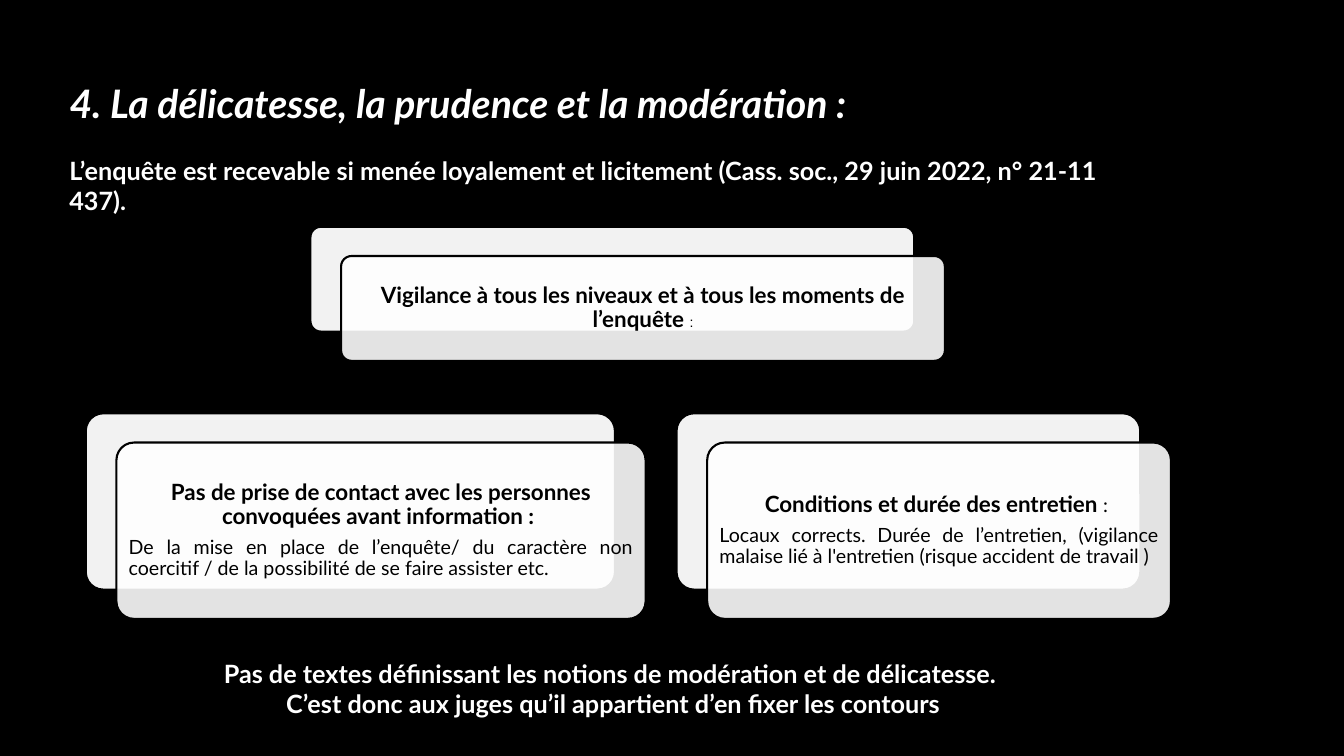
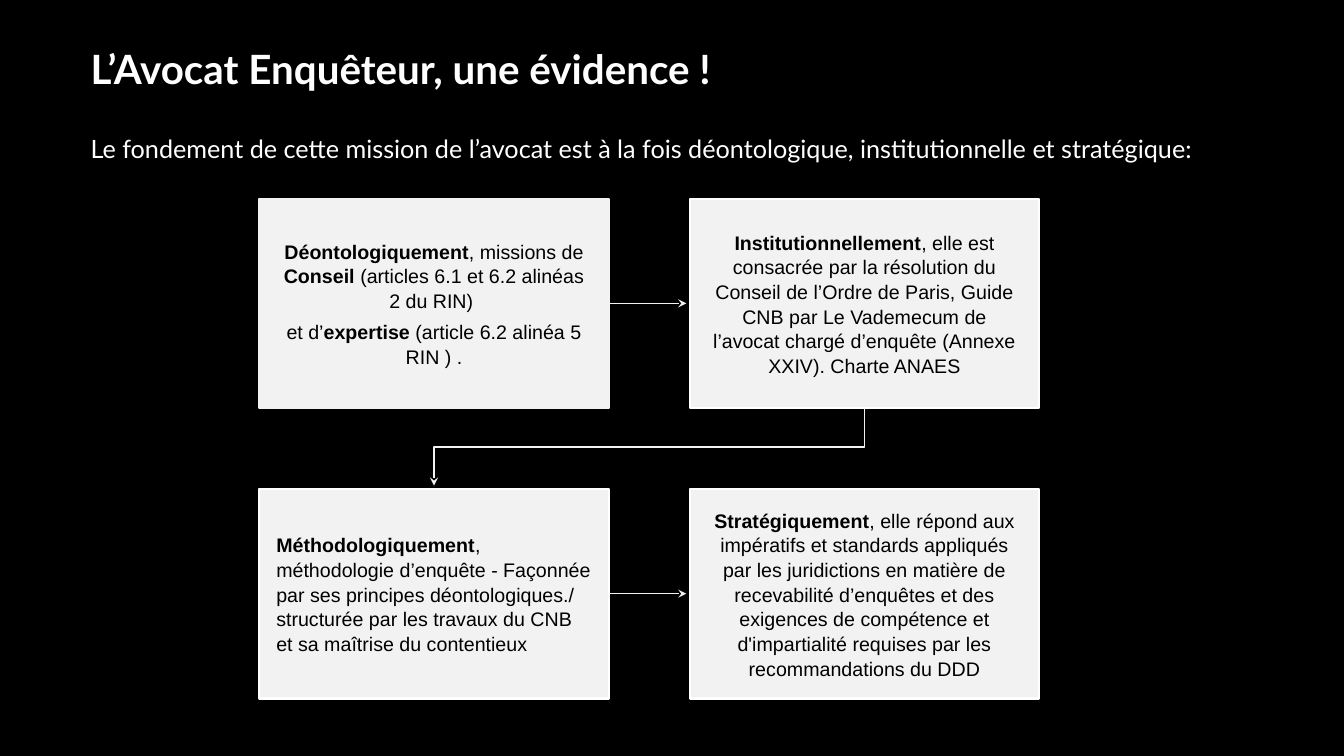
"""Build two slides on the lawyer's inquiry: its moderation rules and its foundations."""
import dataclasses
import typing

import lxml.etree
import pptx
import pptx.dml.color
import pptx.enum.shapes
import pptx.enum.text
import pptx.oxml.ns
import pptx.util

COLORS = {"black": "000000", "white": "FFFFFF", "light": "F2F2F2"}
SHAPES = pptx.enum.shapes.MSO_SHAPE
LINES = pptx.enum.shapes.MSO_CONNECTOR
ALIGN = pptx.enum.text.PP_ALIGN
ANCHOR = pptx.enum.text.MSO_ANCHOR
SIZE = (pptx.util.Inches(13.33), pptx.util.Inches(7.5))

TITLE = {"name": "Lato", "size": pptx.util.Pt(28), "bold": True, "italic": False}
LEAD = TITLE | {"size": pptx.util.Pt(18)}
HEAD = TITLE | {"size": pptx.util.Pt(16)}
BODY = TITLE | {"size": pptx.util.Pt(14), "bold": False}
CARD = BODY | {"name": "Arial"}
STRONG = CARD | {"bold": True}


class Run(typing.NamedTuple):
    text: str
    fmt: dict


@dataclasses.dataclass
class Para:
    runs: list[Run]
    align: ALIGN = ALIGN.CENTER
    spacing: float = 1.0
    before: float = 0


class Box(typing.NamedTuple):
    """A rectangle in hundredths of the slide's width and height."""
    x: float
    y: float
    w: float
    h: float

    def emu(self) -> list[int]:
        return [*across(self.x, self.y), *across(self.w, self.h)]


@dataclasses.dataclass
class Panel:
    box: Box
    paras: list[Para]


def across(x: float, y: float) -> tuple[int, int]:
    """Turn hundredths of the slide into lengths."""
    return round(SIZE[0] * x / 100), round(SIZE[1] * y / 100)


def rgb(name: str) -> pptx.dml.color.RGBColor:
    """Look up a colour."""
    return pptx.dml.color.RGBColor.from_string(COLORS[name])


def assign(target: object, values: dict) -> None:
    """Set each attribute of the target."""
    for key, value in values.items():
        setattr(target, key, value)


def write(tf, paras: list[Para], color: str, anchor: ANCHOR, inset: tuple[float, float]) -> None:
    """Fill a text frame with formatted paragraphs."""
    dx, dy = map(pptx.util.Inches, inset)
    assign(tf, {"word_wrap": True, "auto_size": pptx.enum.text.MSO_AUTO_SIZE.NONE,
                "vertical_anchor": anchor, "margin_left": dx, "margin_right": dx,
                "margin_top": dy, "margin_bottom": dy})
    for i, para in enumerate(paras):
        p = tf.add_paragraph() if i else tf.paragraphs[0]
        assign(p, {"alignment": para.align, "line_spacing": para.spacing,
                   "space_before": pptx.util.Pt(para.before)})
        for run in para.runs:
            r = p.add_run()
            r.text = run.text
            assign(r.font, run.fmt)
            r.font.color.rgb = rgb(color)


def add_text(s, box: Box, paras: list[Para]) -> None:
    """Add white text on the background."""
    write(s.shapes.add_textbox(*box.emu()).text_frame, paras, "white", ANCHOR.TOP, (0.1, 0.05))


def add_slide(prs, box: Box, title: str, **fmt):
    """Add a slide with its title placed and formatted."""
    s = prs.slides.add_slide(prs.slide_layouts[5])
    sp = s.shapes.title
    assign(sp, dict(zip(("left", "top", "width", "height"), box.emu())))
    write(sp.text_frame, [Para([Run(title, TITLE | fmt)], ALIGN.LEFT)], "white",
          ANCHOR.MIDDLE, (0.1, 0.05))
    return s


def add_block(s, kind: SHAPES, box: Box, fill: str, line: str):
    """Add a filled and outlined shape."""
    sp = s.shapes.add_shape(kind, *box.emu())
    sp.shadow.inherit = False
    sp.fill.solid()
    sp.fill.fore_color.rgb = rgb(fill)
    sp.line.color.rgb = rgb(line)
    sp.line.width = pptx.util.Pt(1.5)
    if kind == SHAPES.ROUNDED_RECTANGLE:
        sp.adjustments[0] = 0.1
    return sp


def add_layered(s, panel: Panel) -> None:
    """Add a rounded card with a translucent sheet shifted over it."""
    box = panel.box
    add_block(s, SHAPES.ROUNDED_RECTANGLE, box, "light", "black")
    front = box._replace(x=box.x + 2.28, y=box.y + 3.87)
    sp = add_block(s, SHAPES.ROUNDED_RECTANGLE, front, "white", "black")
    clr = sp._element.spPr.find(pptx.oxml.ns.qn("a:solidFill"))[0]
    lxml.etree.SubElement(clr, pptx.oxml.ns.qn("a:alpha"), val="89000")
    write(sp.text_frame, panel.paras, "black", ANCHOR.MIDDLE, (0.07, 0.07))


def add_arrow(s, kind: LINES, begin: tuple[int, int], end: tuple[int, int], turned: bool = False) -> None:
    """Add an arrow; a turned one leaves and arrives vertically."""
    if turned:
        (x1, y1), (x2, y2) = begin, end
        mx, my = (x1 + x2) // 2, (y1 + y2) // 2
        dx, dy = abs(y2 - y1) // 2, abs(x2 - x1) // 2
        begin, end = (mx - dx, my - dy), (mx + dx, my + dy)
    cx = s.shapes.add_connector(kind, *begin, *end)
    cx.line.color.rgb = rgb("light")
    cx.line.width = pptx.util.Pt(1)
    qn, sp_pr = pptx.oxml.ns.qn, cx._element.spPr
    if turned:
        sp_pr.find(qn("a:xfrm")).set("rot", "5400000")
    lxml.etree.SubElement(sp_pr.find(qn("a:ln")), qn("a:tailEnd"), type="stealth")
    lxml.etree.SubElement(sp_pr, qn("a:effectLst"))


def moderation(prs) -> None:
    """Draw the slide on delicacy, prudence and moderation."""
    s = add_slide(prs, Box(4.42, 8.93, 82.3, 9.33),
                  "4. La délicatesse, la prudence et la modération :", italic=True)
    add_text(s, Box(4.42, 19.87, 82.3, 10), [Para([Run(
        "L’enquête est recevable si menée loyalement et licitement "
        "(Cass. soc., 29 juin 2022, n° 21‑11 437).", LEAD)], ALIGN.LEFT)])
    panels = [
        Panel(Box(23.1, 30, 44.93, 13.87), [
            Para([Run("Vigilance à tous les niveaux et à tous les moments de l’enquête ", HEAD),
                  Run(":", CARD | {"size": pptx.util.Pt(10)})], spacing=0.9)]),
        Panel(Box(6.38, 54.67, 39.38, 23.33), [
            Para([Run("Pas de prise de contact avec les personnes convoquées avant information : ",
                      HEAD)], spacing=0.9),
            Para([Run("De la mise en place de l’enquête/ du caractère non coercitif / "
                      "de la possibilité de se faire assister etc. ", BODY)],
                 ALIGN.JUSTIFY, 0.9, 5.6)]),
        Panel(Box(50.34, 54.67, 34.51, 23.33), [
            Para([Run("Conditions et durée des entretien ", HEAD), Run(": ", BODY)], spacing=0.9),
            Para([Run("Locaux corrects. Durée de l’entretien, (vigilance malaise lié à l'entretien "
                      "(risque accident de travail )", BODY)], ALIGN.JUSTIFY, 0.9, 5.6)]),
    ]
    for panel in panels:
        add_layered(s, panel)
    add_text(s, Box(2.18, 86.4, 86.87, 13.47), [Para([Run(text, LEAD)]) for text in (
        "Pas de textes définissant les notions de modération et de délicatesse. ",
        "C’est donc aux juges qu’il appartient d’en fixer les contours")])


def foundations(prs) -> None:
    """Draw the slide on the four foundations of the mission."""
    s = add_slide(prs, Box(6, 4.4, 84.62, 9.33), "L’Avocat Enquêteur, une évidence !",
                  size=pptx.util.Pt(28.8))
    add_text(s, Box(6, 16.93, 84.62, 6), [Para([Run(
        "Le fondement de cette mission de l’avocat est à la fois déontologique, "
        "institutionnelle et stratégique:", LEAD | {"bold": False})], ALIGN.LEFT)])
    cards = [
        [Para([Run("Déontologiquement", STRONG), Run(", missions de ", CARD), Run("Conseil", STRONG),
               Run(" (articles 6.1 et 6.2 alinéas 2 du RIN) ", CARD)], spacing=1.05),
         Para([Run("et d’", CARD), Run("expertise", STRONG),
               Run(" (article 6.2 alinéa 5 RIN ) .", CARD)], spacing=1.05, before=4.9)],
        [Para([Run("Institutionnellement", STRONG),
               Run(", elle est consacrée par la résolution du Conseil de l’Ordre de Paris, Guide CNB "
                   "par Le Vademecum de l’avocat chargé d’enquête (Annexe XXIV). Charte ANAES", CARD)],
              spacing=1.05)],
        [Para([Run("Méthodologiquement", STRONG),
               Run(", méthodologie d’enquête - Façonnée par ses principes déontologiques./ "
                   "structurée par les travaux du CNB et sa maîtrise du contentieux", CARD)],
              ALIGN.LEFT, 1.05)],
        [Para([Run("Stratégiquement", STRONG),
               Run(", elle répond aux impératifs et standards appliqués par les juridictions en "
                   "matière de recevabilité d’enquêtes et des exigences de compétence et "
                   "d'impartialité requises par les recommandations du DDD", CARD)], spacing=1.05)],
    ]
    first, gap_x, gap_y, reach = Box(19.28, 26.27, 26.03, 27.73), 6, 10.67, 0.96
    boxes = [first._replace(x=first.x + i % 2 * (first.w + gap_x),
                            y=first.y + i // 2 * (first.h + gap_y)) for i in range(len(cards))]
    for i, (box, paras) in enumerate(zip(boxes, cards)):
        sp = add_block(s, SHAPES.RECTANGLE, box, "light", "white" if i else "light")
        write(sp.text_frame, paras, "black", ANCHOR.MIDDLE, (0.17, 0.18))
    for box in boxes[::2]:
        right, middle = box.x + box.w, box.y + box.h / 2
        add_arrow(s, LINES.STRAIGHT, across(right, middle), across(right + gap_x * reach, middle))
    bottom = first.y + first.h
    add_arrow(s, LINES.ELBOW, across(boxes[1].x + first.w / 2, bottom),
              across(first.x + first.w / 2, bottom + gap_y * reach), turned=True)


def main() -> None:
    """Build and save the deck."""
    prs = pptx.Presentation()
    prs.slide_width, prs.slide_height = SIZE
    fill = prs.slide_master.background.fill
    fill.solid()
    fill.fore_color.rgb = rgb("black")
    moderation(prs)
    foundations(prs)
    prs.save("out.pptx")


if __name__ == "__main__":
    main()
